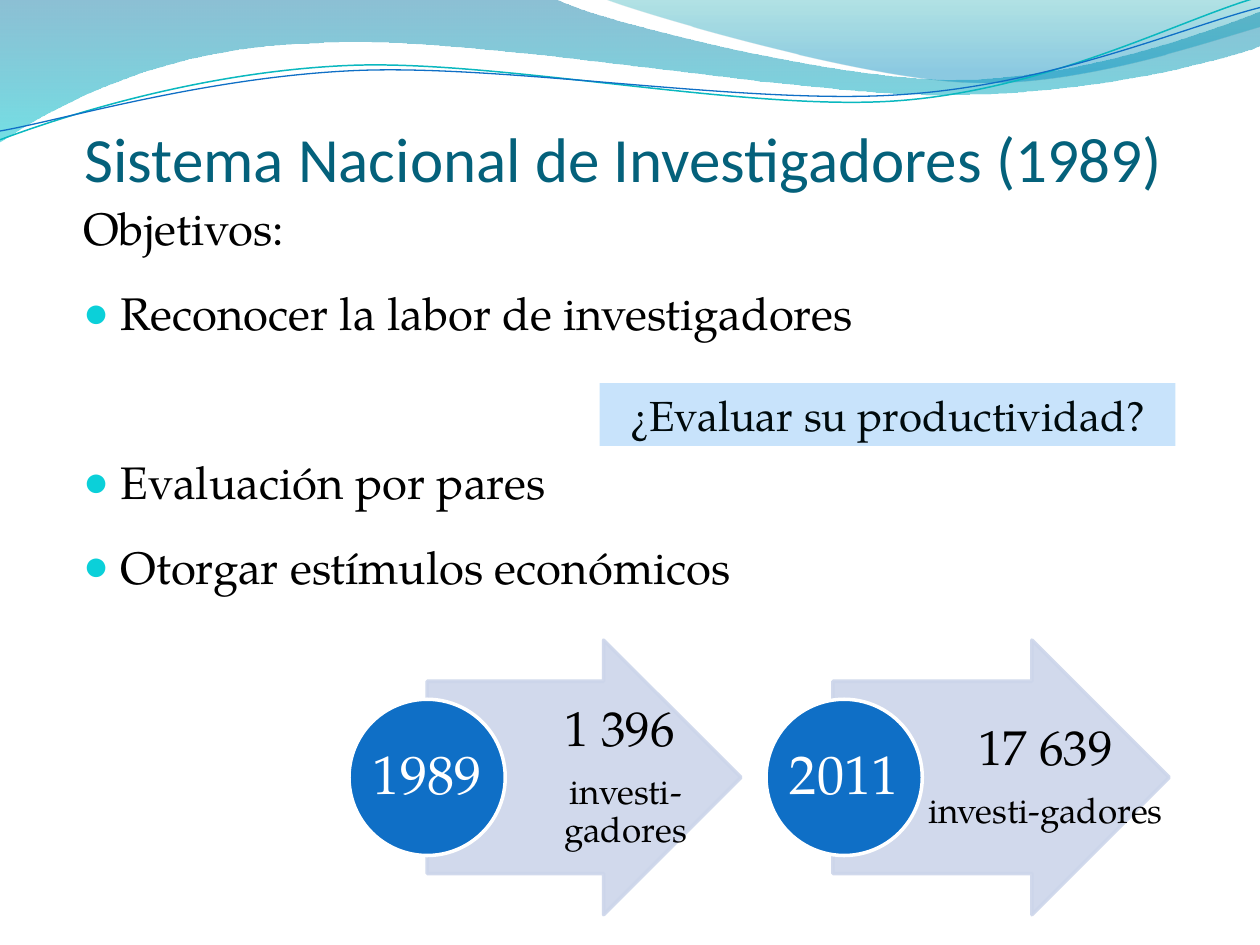
from lxml.etree import SubElement
from pptx import Presentation
from pptx.dml.color import RGBColor
from pptx.enum.shapes import MSO_SHAPE
from pptx.enum.text import MSO_ANCHOR, MSO_AUTO_SIZE, PP_ALIGN
from pptx.oxml.ns import qn
from pptx.util import Inches, Pt

THEME = {
    "heading_font": "Calibri", "body_font": "TeX Gyre Pagella",
    "title": "04617B", "text": "000000", "bullet": "0BD0D9",
    "question": "000A0C", "question_fill": "C8E3FB",
    "arrow": "CCD5EA", "circle": "0F6FC6", "white": "FFFFFF",
    "title_size": 36, "body_size": 26, "question_size": 24,
    "count_size": 28, "unit_size": 20, "year_size": 31,
}
TITLE = "Sistema Nacional de Investigadores (1989) "
INTRO = "Objetivos:"
GOALS = ["Reconocer la labor de investigadores", "Evaluación por pares",
         "Otorgar estímulos económicos"]
GOAL_AFTER_QUESTION = GOALS[1]
QUESTION = "¿Evaluar su productividad?"
UNIT = "investi-gadores"
STAGES = [
    {"year": "1989", "count": "1 396 ", "circle_left": 2.77,
     "arrow_left": 3.39, "arrow_width": 2.49},
    {"year": "2011", "count": "17 639", "circle_left": 6.08,
     "arrow_left": 6.61, "arrow_width": 2.67},
]
CIRCLE, ARROW_HEIGHT, ARROW_MIDDLE = 1.24, 2.18, 6.17

BANDS = [
    {"path": [[(0, 0)], [(4.4, -0.01)],
              [(4.76, 0.17), (6.64, 0.63), (7.58, 0.63)],
              [(8.53, 0.63), (9.58, 0.26), (10, 0.09)], [(10.01, 0.36)],
              [(9.83, 0.44), (8.7, 0.76), (7.46, 0.75)],
              [(6.22, 0.75), (3.82, 0.28), (2.57, 0.34)],
              [(1.29, 0.36), (0.46, 0.83), (-0.01, 1.13)], [(0, 0)]],
     "stops": [(0, "0074A1", 45), (1, "00C6CF", 55)]},
    {"path": [[(4.79, -0.01)], [(5.09, 0.11), (6.82, 0.62), (7.69, 0.65)],
              [(8.56, 0.69), (9.61, 0.32), (10, 0.21)], [(10, 0)], [(4.79, -0.01)]],
     "stops": [(0, "00A1A9", 30), (0.8, "008BBF", 45)]},
]
STRANDS = [
    {"path": [[(0, 1.11)], [(0.48, 0.93), (1.58, 0.57), (2.77, 0.52)],
              [(3.95, 0.47), (5.93, 0.89), (7.13, 0.8)],
              [(8.33, 0.71), (9.38, 0.15), (9.98, -0.02)]],
     "color": "0AB8BF", "width": 0.85},
    {"path": [[(0, 1.04)], [(0.47, 0.96), (1.64, 0.61), (2.83, 0.56)],
              [(4.03, 0.51), (5.97, 0.84), (7.17, 0.75)],
              [(8.36, 0.67), (9.41, 0.21), (10, 0.06)]],
     "color": "0F6FC6", "width": 0.75},
]


def rgb(value):
    return RGBColor.from_string(value)


def place(shape, left, top, width, height):
    shape.left, shape.top = Inches(left), Inches(top)
    shape.width, shape.height = Inches(width), Inches(height)


def add_wave(slide, path, closed, layer):
    start, *rest = [(Inches(x), Inches(y)) for segment in path for x, y in segment]
    builder = slide.shapes.build_freeform(*start)
    builder.add_line_segments(rest, close=closed)
    shape = builder.convert_to_shape()
    shape.shadow.inherit = False
    bend_segments(shape, path[1:])
    slide.shapes._spTree.insert(2 + layer, shape._element)
    return shape


def bend_segments(shape, segments):
    lines = iter(list(shape._element.spPr.iter(qn("a:lnTo"))))
    for segment in segments:
        group = [next(lines) for _ in segment]
        if len(group) == 3:
            curve = group[0].makeelement(qn("a:cubicBezTo"))
            group[0].addprevious(curve)
            for line in group:
                curve.append(line[0])
                line.getparent().remove(line)


def set_opacity(shape, percents):
    colors = shape._element.spPr.iter(qn("a:srgbClr"))
    for color, percent in zip(colors, percents):
        SubElement(color, qn("a:alpha")).set("val", str(percent * 1000))


def add_waves(slide):
    for layer, band in enumerate(BANDS):
        shape = add_wave(slide, band["path"], True, layer)
        shape.line.fill.background()
        shape.fill.gradient()
        shape.fill.gradient_angle = 270
        for stop, (position, color, _) in zip(shape.fill.gradient_stops, band["stops"]):
            stop.position = position
            stop.color.rgb = rgb(color)
        set_opacity(shape, [opacity for _, _, opacity in band["stops"]])
    for layer, strand in enumerate(STRANDS, len(BANDS)):
        shape = add_wave(slide, strand["path"], False, layer)
        shape.fill.background()
        shape.line.color.rgb = rgb(strand["color"])
        shape.line.width = Pt(strand["width"])


def format_text(paragraph, size, color, font="body_font", align=PP_ALIGN.CENTER):
    paragraph.alignment = align
    for run in paragraph.runs:
        run.font.name = THEME[font]
        run.font.size = Pt(THEME[size])
        run.font.color.rgb = rgb(THEME[color])


def set_frame(text_frame, anchor, margins):
    text_frame.word_wrap = True
    text_frame.auto_size = MSO_AUTO_SIZE.NONE
    text_frame.vertical_anchor = anchor
    (text_frame.margin_left, text_frame.margin_top,
     text_frame.margin_right, text_frame.margin_bottom) = map(Inches, margins)


def set_bullet(paragraph, visible):
    properties = paragraph._p.get_or_add_pPr()
    properties.set("marL", str(Inches(0.3)))
    properties.set("indent", str(-Inches(0.3)))
    if not visible:
        SubElement(properties, qn("a:buNone"))
        return
    color = SubElement(properties, qn("a:buClr"))
    SubElement(color, qn("a:srgbClr")).set("val", THEME["bullet"])
    SubElement(properties, qn("a:buSzPct")).set("val", "95000")
    SubElement(properties, qn("a:buChar")).set("char", "●")


def fill_placeholders(slide):
    title, body = slide.placeholders
    place(title, 0.04, 0.3, 9.93, 1.25)
    title.text_frame.text = TITLE
    set_frame(title.text_frame, MSO_ANCHOR.BOTTOM, (0, 0.05, 0, 0))
    format_text(title.text_frame.paragraphs[0], "title_size", "title", "heading_font")

    place(body, 0.57, 1.55, 9, 4.95)
    body.text_frame.text = "\n".join([INTRO, *GOALS])
    set_frame(body.text_frame, MSO_ANCHOR.TOP, (0.09, 0.04, 0.1, 0.05))
    for paragraph in body.text_frame.paragraphs:
        format_text(paragraph, "body_size", "text", align=PP_ALIGN.LEFT)
        paragraph.space_before = Pt(53.5 if paragraph.text == GOAL_AFTER_QUESTION else 5.2)
        paragraph.space_after = Pt(12)
        set_bullet(paragraph, paragraph.text != INTRO)


def add_block(slide, kind, box, fill, line=None):
    shape = slide.shapes.add_shape(kind, *map(Inches, box))
    shape.shadow.inherit = False
    shape.fill.solid()
    shape.fill.fore_color.rgb = rgb(THEME[fill])
    if line:
        shape.line.color.rgb = rgb(THEME[line])
        shape.line.width = Pt(2)
    else:
        shape.line.fill.background()
    return shape


def add_stage(slide, stage):
    left, width = stage["arrow_left"], stage["arrow_width"]
    top = ARROW_MIDDLE - ARROW_HEIGHT / 2
    arrow = add_block(slide, MSO_SHAPE.RIGHT_ARROW,
                      (left, top, width, ARROW_HEIGHT), "arrow", "arrow")
    arrow.adjustments[0], arrow.adjustments[1] = 0.7, 0.5
    set_opacity(arrow, (90, 90))

    label = slide.shapes.add_textbox(*map(Inches, (left + width / 4, top,
                                                   width * 3 / 4, ARROW_HEIGHT)))
    label.text_frame.text = f"{stage['count']}\n{UNIT}"
    set_frame(label.text_frame, MSO_ANCHOR.MIDDLE, (0.08, 0.02, 0.04, 0.02))
    for paragraph, size in zip(label.text_frame.paragraphs, ("count_size", "unit_size")):
        format_text(paragraph, size, "text")
        paragraph.line_spacing = 0.9
        paragraph.space_after = Pt(THEME[size] * 0.35)

    circle = add_block(slide, MSO_SHAPE.OVAL, (stage["circle_left"], ARROW_MIDDLE - CIRCLE / 2,
                                               CIRCLE, CIRCLE), "circle", "white")
    circle.text_frame.text = stage["year"]
    set_frame(circle.text_frame, MSO_ANCHOR.MIDDLE, (0, 0, 0, 0))
    circle.text_frame.word_wrap = False
    format_text(circle.text_frame.paragraphs[0], "year_size", "white")
    circle.text_frame.paragraphs[0].line_spacing = 0.9


def main():
    presentation = Presentation()
    presentation.slide_width, presentation.slide_height = Inches(10), Inches(7.5)
    slide = presentation.slides.add_slide(presentation.slide_layouts[1])
    add_waves(slide)
    fill_placeholders(slide)
    question = add_block(slide, MSO_SHAPE.RECTANGLE, (4.76, 3.04, 4.57, 0.5), "question_fill")
    question.text_frame.text = QUESTION
    set_frame(question.text_frame, MSO_ANCHOR.TOP, (0.1, 0.05, 0.1, 0.05))
    format_text(question.text_frame.paragraphs[0], "question_size", "question")
    for stage in STAGES:
        add_stage(slide, stage)
    presentation.save("out.pptx")


if __name__ == "__main__":
    main()
